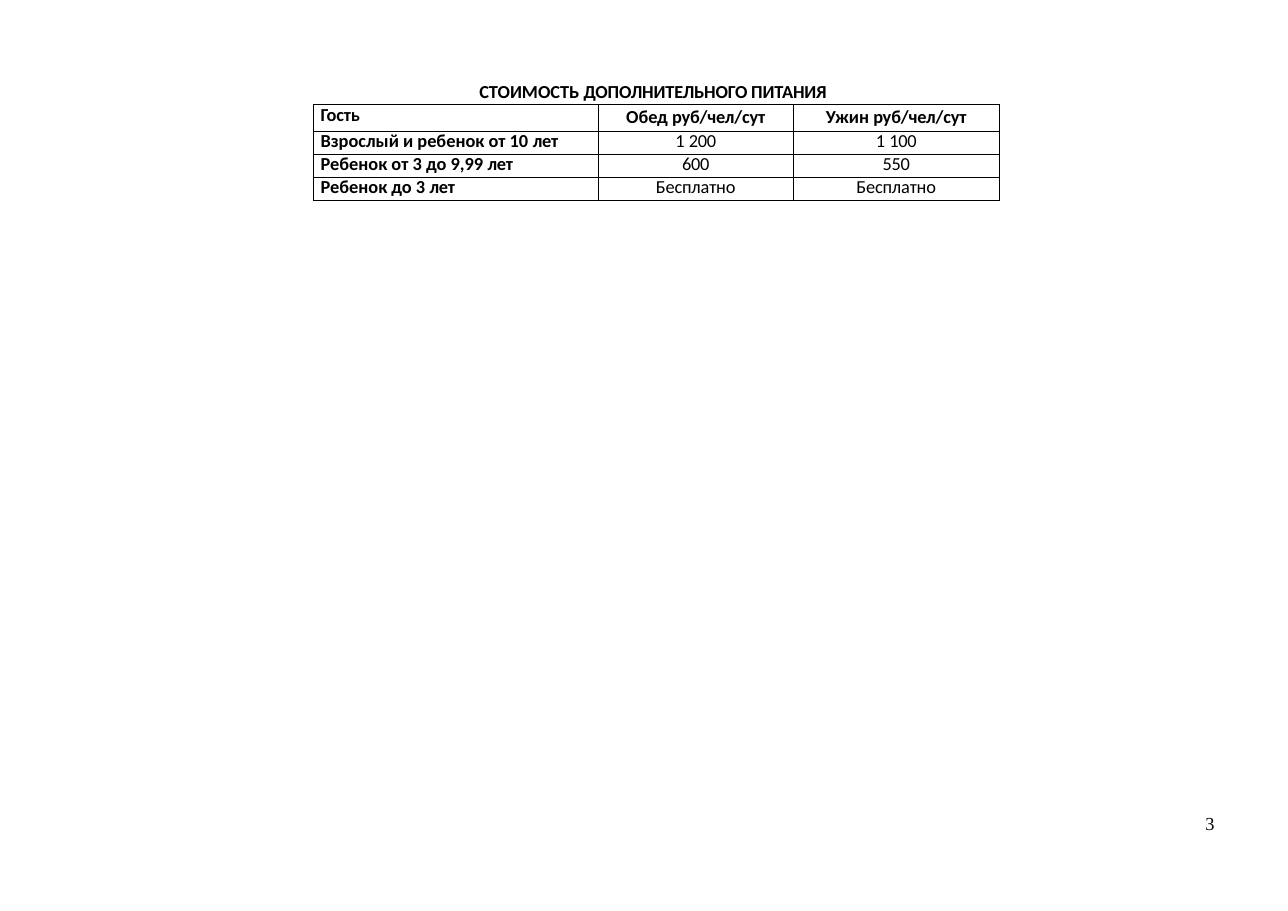
from lxml.etree import SubElement
from pptx import Presentation
from pptx.dml.color import RGBColor
from pptx.enum.text import PP_ALIGN
from pptx.oxml.ns import qn
from pptx.util import Inches, Pt

BLACK = "000000"
LINE_SPACING = Pt(14.1)


def color(value):
    return RGBColor.from_string(value)


def write(paragraph, runs, bold=False, font_name="Calibri", **paragraph_format):
    for name, value in paragraph_format.items():
        setattr(paragraph, name, value)
    for text, tracking in runs:
        run = paragraph.add_run()
        run.text = text
        for name, value in {"name": font_name, "size": Pt(12), "bold": bold}.items():
            setattr(run.font, name, value)
        run.font.color.rgb = color(BLACK)
        run.font._element.set("spc", str(tracking))


presentation = Presentation()
presentation.slide_width = Inches(11.69)
presentation.slide_height = Inches(8.27)
slide = presentation.slides.add_slide(presentation.slide_layouts[6])

page_number = [("3", -50)]
title = [("СТОИМОСТЬ ", 0), ("ДОПОЛНИТЕЛЬНОГО ПИТАНИЯ", -10)]
text_boxes = [
    ((10.9, 7.38, 0.18, 0.21), 0.04, 0, page_number,
     {"font_name": "Times New Roman", "line_spacing": LINE_SPACING}),
    ((4.34, 0.72, 3.25, 0.23), 0.01, 0.01, title,
     {"bold": True, "space_before": Pt(1)}),
]
for position, left, top, runs, text_format in text_boxes:
    text_frame = slide.shapes.add_textbox(*map(Inches, position)).text_frame
    margins = {"margin_left": left, "margin_top": top, "margin_right": 0, "margin_bottom": 0}
    for name, value in margins.items():
        setattr(text_frame, name, Inches(value))
    text_frame.word_wrap = True
    write(text_frame.paragraphs[0], runs, **text_format)

prices = [
    [[("Гость", -10)],
     [("Обед ", 0), ("руб/чел/сут", -10)],
     [("Ужин ", 0), ("руб/чел/сут", -10)]],
    [[("Взрослый и ребенок от 10 ", 0), ("лет", -20)],
     [("1 ", 0), ("200", -20)],
     [("1 ", 0), ("100", -20)]],
    [[("Ребенок от 3 до 9,99 ", 0), ("лет", -20)],
     [("600", -20)],
     [("550", -20)]],
    [[("Ребенок до 3 ", 0), ("лет", -20)],
     [("Бесплатно", -10)],
     [("Бесплатно", -10)]],
]
column_widths = [2.59, 1.77, 1.87]
row_heights = [0.24, 0.21, 0.21, 0.21]

table = slide.shapes.add_table(
    len(row_heights), len(column_widths), Inches(2.84), Inches(0.95),
    Inches(sum(column_widths)), Inches(sum(row_heights))).table
table.first_row = False
table.horz_banding = False
for column, width in zip(table.columns, column_widths):
    column.width = Inches(width)
for row, height in zip(table.rows, row_heights):
    row.height = Inches(height)

for row_index, price_row in enumerate(prices):
    for column_index, runs in enumerate(price_row):
        is_header = row_index == 0
        is_guest = column_index == 0
        is_meal_header = is_header and not is_guest
        cell = table.cell(row_index, column_index)
        margins = {
            "margin_left": 0.07 if is_guest else 0,
            "margin_top": 0.01 if is_meal_header else 0,
            "margin_right": 0,
            "margin_bottom": 0,
        }
        for name, value in margins.items():
            setattr(cell, name, Inches(value))

        properties = cell._tc.get_or_add_tcPr()
        for side in ("a:lnL", "a:lnR", "a:lnT", "a:lnB"):
            border = SubElement(properties, qn(side), w=str(Pt(0.5)))
            border_fill = SubElement(border, qn("a:solidFill"))
            SubElement(border_fill, qn("a:srgbClr"), val=BLACK)
        cell.fill.background()

        spacing = {"space_before": Pt(0.9)} if is_meal_header else {"line_spacing": LINE_SPACING}
        write(cell.text_frame.paragraphs[0], runs, bold=is_header or is_guest,
              alignment=PP_ALIGN.LEFT if is_guest else PP_ALIGN.CENTER, **spacing)

presentation.save("out.pptx")
